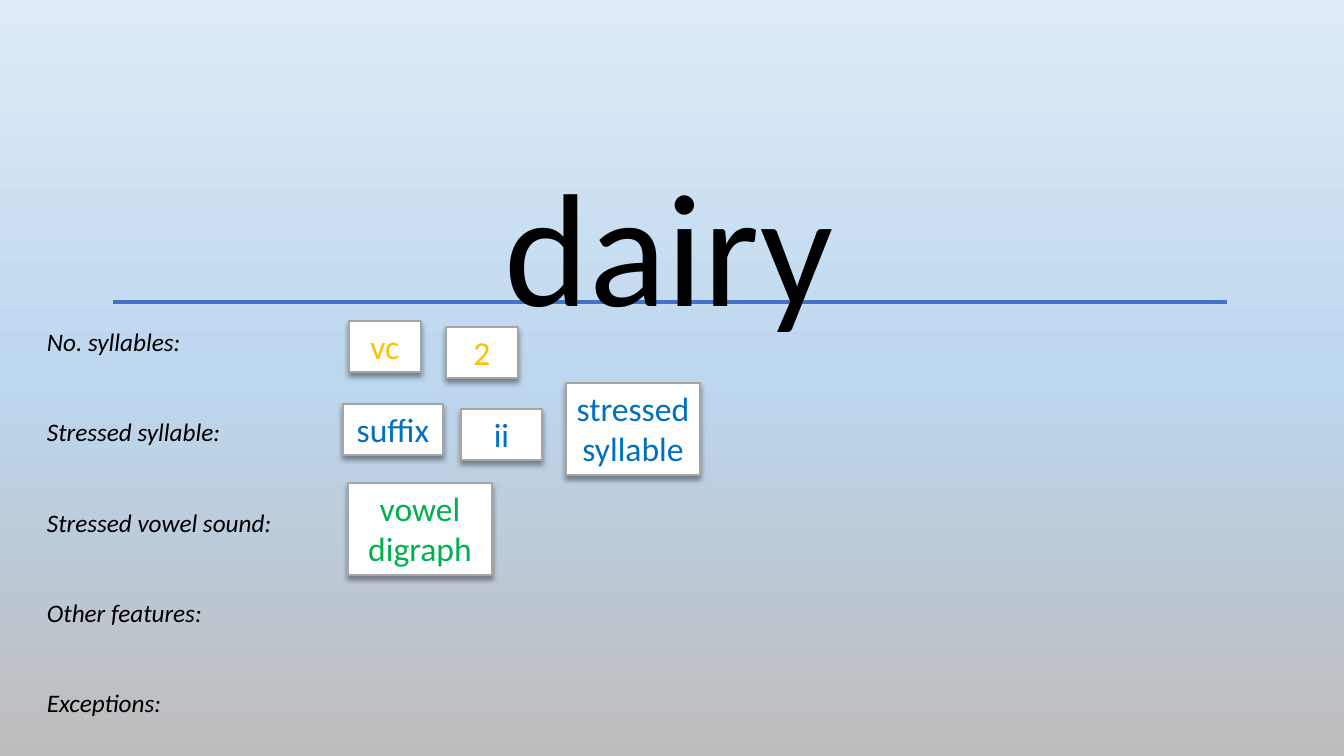
from copy import deepcopy

from lxml import etree
from pptx import Presentation
from pptx import util as u
from pptx.dml import color
from pptx.enum import shapes, text
from pptx.oxml import ns

SCALE = 12192000 / 1344  # EMU in one px
BLACK, WHITE, GREY, LINE_BLUE = "000000", "FFFFFF", "A5A5A5", "4472C4"
AMBER, BLUE, GREEN = "FFC000", "0070C0", "00B050"


def rgb(value):
    return color.RGBColor.from_string(value)


def px(*lengths):
    return [u.Emu(round(length * SCALE)) for length in lengths]


class WordSlide:
    font = "Calibri"

    def __init__(self, deck):
        deck.slide_width, deck.slide_height = px(1344, 756)
        self.page = deck.slides.add_slide(deck.slide_layouts[5])

    def background(self, stops):
        fill = self.page.background.fill
        fill.gradient()
        fill.gradient_angle = 270
        stop_list = self.page.element.find(".//" + ns.qn("a:gsLst"))
        while len(stop_list) < len(stops):
            stop_list.append(deepcopy(stop_list[0]))
        for stop, (position, value) in zip(fill.gradient_stops, stops):
            stop.position = position
            stop.color.rgb = rgb(value)

    def set_text(self, box, lines, size, ink, align, italic=False, gap=0, wrap=True):
        frame = box.text_frame
        frame.word_wrap = wrap
        frame.auto_size = text.MSO_AUTO_SIZE.NONE
        frame.vertical_anchor = text.MSO_ANCHOR.TOP
        for index, line in enumerate(lines):
            para = frame.add_paragraph() if index else frame.paragraphs[0]
            para.alignment = align
            para.space_before = u.Pt(gap if index else 0)
            span = para.add_run()
            span.text = line
            span.font.name = self.font
            span.font.size = u.Pt(size)
            span.font.italic = italic
            span.font.color.rgb = rgb(ink)

    def rule(self, left, right, y):
        line = self.page.shapes.add_connector(
            shapes.MSO_CONNECTOR.STRAIGHT, *px(left, y, right, y))
        line.line.color.rgb = rgb(LINE_BLUE)
        line.line.width = u.Pt(3)
        etree.SubElement(line.element.spPr, ns.qn("a:effectLst"))

    def title(self, word, area, size):
        box = self.page.shapes.title
        box.left, box.top, box.width, box.height = px(*area)
        self.set_text(box, [word], size, BLACK, text.PP_ALIGN.CENTER)
        # Bring the word in front of the rule
        box.element.getparent().append(box.element)

    def labels(self, lines, area):
        box = self.page.shapes.add_textbox(*px(*area))
        self.set_text(box, lines, 18, BLACK, text.PP_ALIGN.LEFT, italic=True, gap=43)

    def card(self, lines, area, ink, wrap=False):
        box = self.page.shapes.add_shape(shapes.MSO_SHAPE.RECTANGLE, *px(*area))
        box.fill.solid()
        box.fill.fore_color.rgb = rgb(WHITE)
        box.line.color.rgb = rgb(GREY)
        box.line.width = u.Pt(1)
        self.shadow(box)
        self.set_text(box, lines, 24, ink, text.PP_ALIGN.CENTER, wrap=wrap)

    def shadow(self, box):
        box.shadow.inherit = False
        effects = box.element.spPr.find(ns.qn("a:effectLst"))
        outer = etree.SubElement(
            effects, ns.qn("a:outerShdw"), blurRad=str(u.Pt(4)), dist=str(u.Pt(3)),
            dir="5400000", algn="t", rotWithShape="0")
        tint = etree.SubElement(outer, ns.qn("a:srgbClr"), val=BLACK)
        etree.SubElement(tint, ns.qn("a:alpha"), val="40000")


def main():
    deck = Presentation()
    slide = WordSlide(deck)
    slide.background([(0, "DEEBF7"), (0.5, "BDD7EE"), (1, "BDBCBC")])

    # Word on its rule
    slide.rule(113, 1227, 302)
    slide.title("dairy", (173, 140, 992, 206), 115)

    # Questions about the word
    slide.labels(["No. syllables:", "Stressed syllable:", "Stressed vowel sound:",
                  "Other features:", "Exceptions:"], (37, 321, 247, 407))

    # Answer cards
    slide.card(["vc"], (349, 321, 72, 51), AMBER)
    slide.card(["2"], (446, 327, 72, 51), AMBER)
    slide.card(["suffix"], (343, 404, 100, 51), BLUE)
    slide.card(["ii"], (461, 409, 81, 51), BLUE)
    slide.card(["stressed", "syllable"], (566, 383, 134, 92), BLUE)
    slide.card(["vowel digraph"], (348, 483, 144, 92), GREEN, wrap=True)

    deck.save("out.pptx")


if __name__ == "__main__":
    main()
